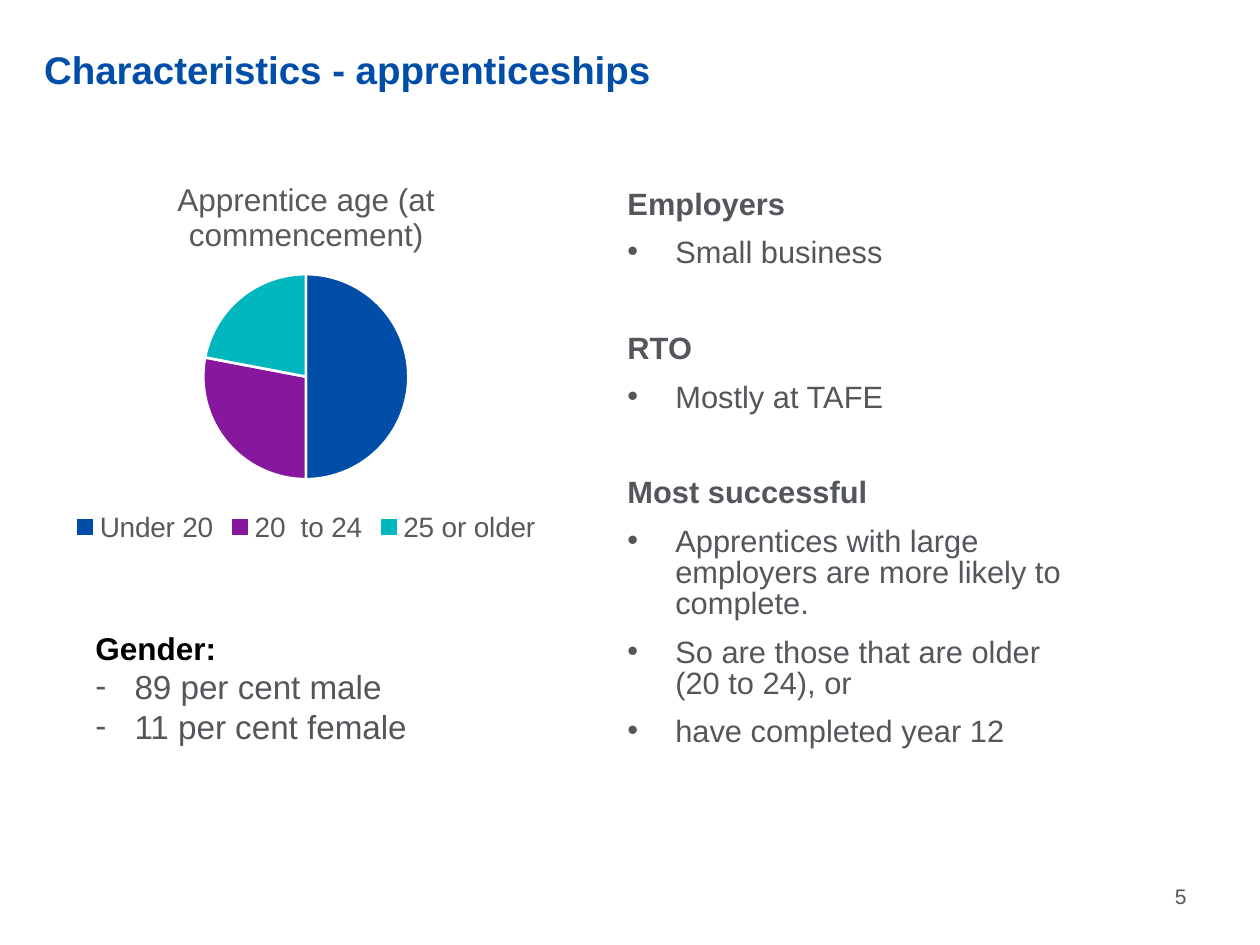
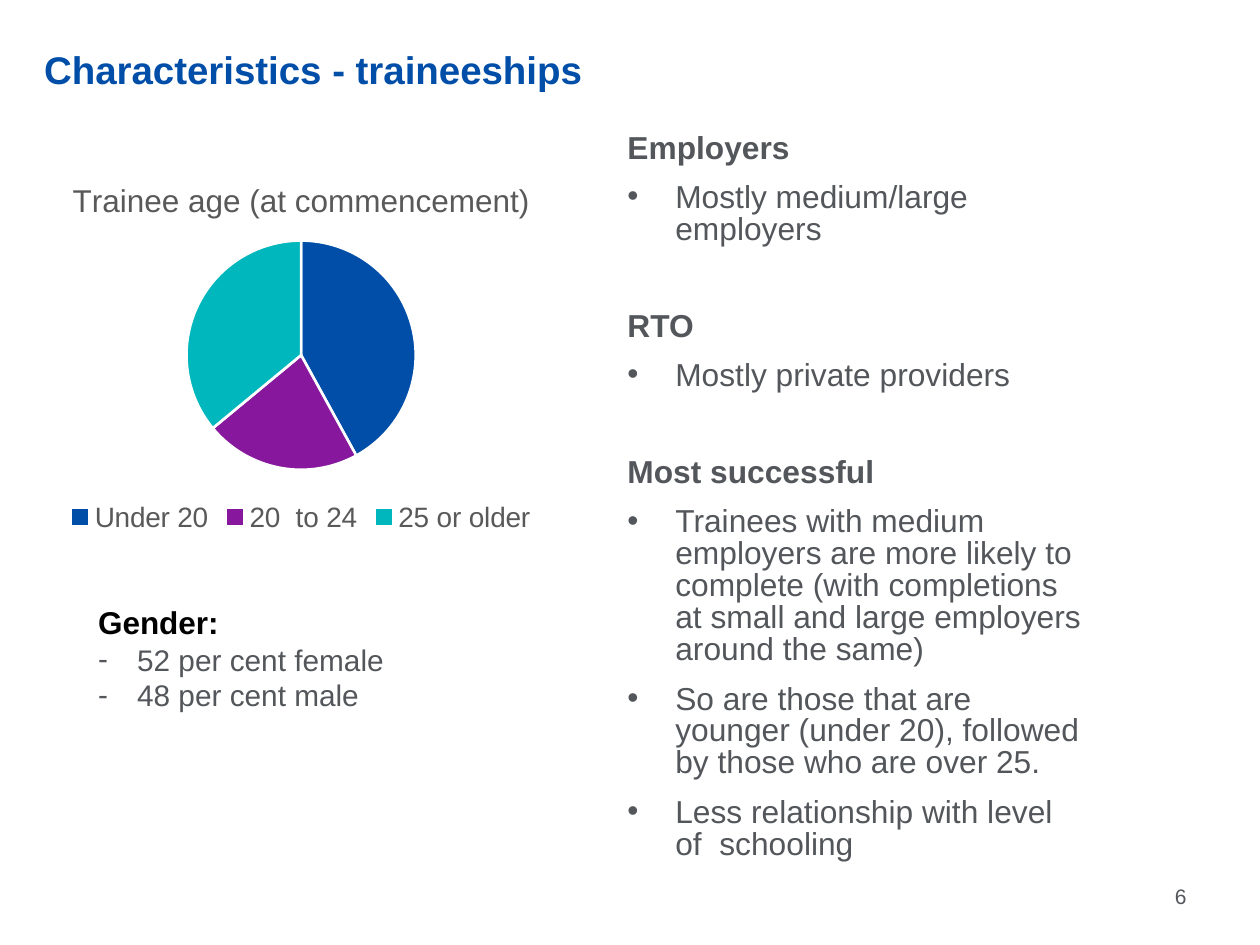
import pptx
import pptx.util
import pptx.chart.data
import pptx.dml.color
import pptx.enum.chart
import pptx.enum.text
import pptx.oxml
import pptx.oxml.ns
import lxml.etree

Inches, Pt = pptx.util.Inches, pptx.util.Pt
qn = pptx.oxml.ns.qn

# Shared look
FONT = "Arial"
HEX = {"blue": "004EA8", "plum": "87189D", "teal": "00B7BD", "grey": "53565A",
       "label": "595959", "black": "000000", "white": "FFFFFF"}
SLICES = ("blue", "plum", "teal")
AGES = ("Under 20", "20  to 24", "25 or older")
TITLE = (0.35, 0.41, 9.25, 0.86)
NUMBER = (9.13, 6.91, 0.48, 0.4)

# Content: pie is centre x, centre y and width on the slide
SLIDES = [
    {"title": "Characteristics - apprenticeships", "page": "5",
     "chart": "Apprentice age (at commencement)", "vals": (50, 28, 22),
     "frame": (0, 1.26, 4.86, 3.09), "pie": (2.43, 2.99, 1.63),
     "gender": ("89 per cent male", "11 per cent female"),
     "gbox": (0.66, 4.94, 2.77, 1.04), "gsize": 19,
     "body": (4.98, 1.51, 3.61, 4.59), "size": 17.6,
     "parts": [
         ("Employers", ["Small business"]),
         ("RTO", ["Mostly at TAFE"]),
         ("Most successful", [
             "Apprentices with large employers are more likely to complete.",
             "So are those that are older (20 to 24), or",
             "have completed year 12"])]},
    {"title": "Characteristics - traineeships", "page": "6",
     "chart": "Trainee age (at commencement)", "vals": (42, 22, 36),
     "frame": (-0.11, 1.27, 5, 3), "pie": (2.39, 2.82, 1.82),
     "gender": ("52 per cent female", "48 per cent male"),
     "gbox": (0.68, 4.74, 2.68, 1.01), "gsize": 17,
     "body": (4.98, 1.06, 3.61, 6.02), "size": 18.1,
     "parts": [
         ("Employers", ["Mostly medium/large employers"]),
         ("RTO", ["Mostly private providers"]),
         ("Most successful", [
             "Trainees with medium employers are more likely to complete "
             "(with completions at small and large employers around the same)",
             "So are those that are younger (under 20), followed by those "
             "who are over 25.",
             "Less relationship with level of  schooling"])]},
]


def style(obj, **vals):
    for key, val in vals.items():
        setattr(obj, key, val)


def paint(font, size, tint, bold=False):
    style(font, name=FONT, size=Pt(size), bold=bold)
    font.color.rgb = pptx.dml.color.RGBColor.from_string(HEX[tint])


def box(slide, area, flush=False, **vals):
    frame = slide.shapes.add_textbox(*map(Inches, area)).text_frame
    style(frame, word_wrap=True, **vals)
    if flush:
        style(frame, margin_left=0, margin_top=0, margin_right=0, margin_bottom=0)
    return frame


def write(frame, text, size, tint, bold=False, mark=None, dent=0, **vals):
    first = frame.paragraphs[0]
    para = frame.add_paragraph() if first.runs else first
    style(para, **vals)
    if mark:
        props = para._p.get_or_add_pPr()
        props.set("marL", str(Inches(dent)))
        props.set("indent", str(-Inches(dent)))
        lxml.etree.SubElement(props, qn("a:buFont")).set("typeface", FONT)
        lxml.etree.SubElement(props, qn("a:buChar")).set("char", mark)
    run = para.add_run()
    run.text = text
    paint(run.font, size, tint, bold)


def place(chart, frame, pie):
    # Plot area as fractions of the chart frame
    left, top, wide, high = frame
    mid, level, size = pie
    spots = {"x": (mid - size / 2 - left) / wide,
             "y": (level - size / 2 - top) / high,
             "w": size / wide, "h": size / high}
    area = chart._chartSpace.find(".//" + qn("c:plotArea"))
    for old in area.findall(qn("c:layout")):
        area.remove(old)
    plan = lxml.etree.Element(qn("c:layout"))
    area.insert(0, plan)
    hand = lxml.etree.SubElement(plan, qn("c:manualLayout"))
    rules = {"layoutTarget": "inner", "xMode": "edge", "yMode": "edge"}
    rules.update({key: f"{val:.3f}" for key, val in spots.items()})
    for key, val in rules.items():
        lxml.etree.SubElement(hand, qn("c:" + key)).set("val", val)


def draw_pie(slide, item):
    data = pptx.chart.data.CategoryChartData()
    data.categories = AGES
    data.add_series("Series 1", item["vals"])
    chart = slide.shapes.add_chart(pptx.enum.chart.XL_CHART_TYPE.PIE,
                                   *map(Inches, item["frame"]), data).chart
    paint(chart.font, 10, "black")
    write(chart.chart_title.text_frame, item["chart"], 18, "label")
    chart.has_legend = True
    style(chart.legend, include_in_layout=False,
          position=pptx.enum.chart.XL_LEGEND_POSITION.BOTTOM)
    paint(chart.legend.font, 16, "label")
    plot = chart.plots[0]
    plot.vary_by_categories = True
    for spot, tint in enumerate(SLICES):
        look = plot.series[0].points[spot].format
        look.fill.solid()
        look.fill.fore_color.rgb = pptx.dml.color.RGBColor.from_string(HEX[tint])
        look.line.color.rgb = pptx.dml.color.RGBColor.from_string(HEX["white"])
        look.line.width = Pt(1.5)
    place(chart, item["frame"], item["pie"])


def build(deck, item):
    slide = deck.slides.add_slide(deck.slide_layouts[6])

    # Title and page number
    write(box(slide, TITLE, flush=True), item["title"], 22, "blue", True,
          line_spacing=0.9)
    write(box(slide, NUMBER, vertical_anchor=pptx.enum.text.MSO_ANCHOR.MIDDLE),
          item["page"], 12, "grey", alignment=pptx.enum.text.PP_ALIGN.CENTER)

    # Headed bullet lists
    size, frame = item["size"], box(slide, item["body"], flush=True)
    for rank, (head, lines) in enumerate(item["parts"]):
        write(frame, head, size, "grey", True, line_spacing=0.84,
              space_before=Pt(37 if rank else 0))
        for line in lines:
            write(frame, line, size, "grey", mark="•", dent=0.38,
                  line_spacing=0.84, space_before=Pt(10))

    # Age chart and gender split
    draw_pie(slide, item)
    frame = box(slide, item["gbox"])
    write(frame, "Gender:", 18, "black", True)
    for line in item["gender"]:
        write(frame, line, item["gsize"], "grey", mark="-", dent=0.31)


def main():
    deck = pptx.Presentation()
    style(deck, slide_width=Inches(10), slide_height=Inches(7.5))
    for item in SLIDES:
        build(deck, item)
    deck.save("out.pptx")


if __name__ == "__main__":
    main()
